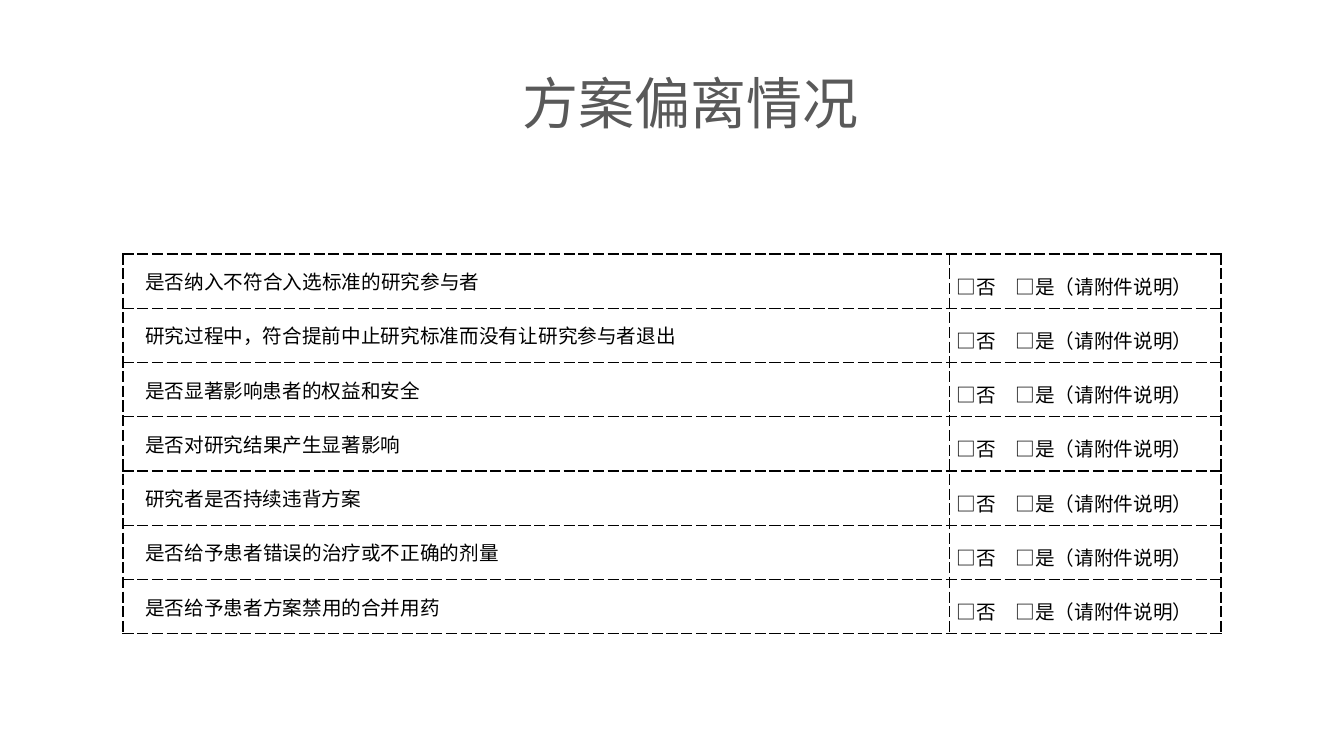
"""Build the slide with the protocol deviation checklist."""
import dataclasses

import pptx
import pptx.dml.color
import pptx.enum.text
import pptx.oxml
import pptx.oxml.ns
import pptx.util

Inches = pptx.util.Inches
Align = pptx.enum.text.PP_ALIGN
Anchor = pptx.enum.text.MSO_ANCHOR


@dataclasses.dataclass(frozen=True)
class Theme:
    sans: str = "Noto Sans CJK SC"
    serif: str = "Times New Roman"
    grey: str = "595959"
    black: str = "000000"
    title: int = 40
    body: int = 14
    rule: int = 1


theme = Theme()


def write(frame, text, fonts=(theme.sans,), size=theme.body, color=theme.black,
          align=Align.JUSTIFY, indent=0, space=None):
    """Fill a frame with text whose parts, split at |, take the fonts in turn."""
    para = frame.paragraphs[0]
    para.alignment = align
    para.line_spacing = space
    if indent:
        props = para._p.get_or_add_pPr()
        props.set("marL", "0")
        props.set("indent", str(Inches(indent)))
    for i, part in enumerate(text.split("|")):
        if not part:
            continue
        run = para.add_run()
        run.text = part
        run.font.name = fonts[i % len(fonts)]
        run.font.size = pptx.util.Pt(size)
        run.font.color.rgb = pptx.dml.color.RGBColor.from_string(color)
        east = pptx.oxml.parse_xml(
            f'<a:ea {pptx.oxml.ns.nsdecls("a")} typeface="{theme.sans}"/>')
        run.font._element.find(pptx.oxml.ns.qn("a:latin")).addnext(east)


def border(cell):
    """Draw a dashed rule on all four sides of a cell."""
    props = cell._tc.get_or_add_tcPr()
    for i, side in enumerate("LRTB"):
        props.insert(i, pptx.oxml.parse_xml(
            f'<a:ln{side} {pptx.oxml.ns.nsdecls("a")} w="{pptx.util.Pt(theme.rule)}">'
            f'<a:solidFill><a:srgbClr val="{theme.black}"/></a:solidFill>'
            f'<a:prstDash val="sysDash"/></a:ln{side}>'))


deck = pptx.Presentation()
deck.slide_width, deck.slide_height = Inches(13.33), Inches(7.5)
slide = deck.slides.add_slide(deck.slide_layouts[6])

title = slide.shapes.add_textbox(Inches(5.08), Inches(0.63), Inches(3.53), Inches(0.77))
title.text_frame.word_wrap = False
title.text_frame.auto_size = pptx.enum.text.MSO_AUTO_SIZE.SHAPE_TO_FIT_TEXT
write(title.text_frame, "方案偏离情况", size=theme.title, color=theme.grey,
      align=Align.CENTER)

items = [
    "是否|纳入不符合|入选|标准的|研究参与者",
    "|研究过程中，符合提前中止研究标准而没有让|研究参与者|退出",
    "|是否显著影响患者的权益和安全",
    "是否对|研究结果产生显著影响",
    "|研究者是否持续违背方案",
    "是否|给予|患者|错误的治疗或不正确的剂量",
    "是否|给予|患者|方案禁用的合并用药",
]
choice = "□否　□是（请附件说明）"

table = slide.shapes.add_table(len(items), 2, Inches(1.22), Inches(2.52),
                               Inches(10.89), Inches(3.77)).table
table.first_row = table.horz_banding = False
for col, width in zip(table.columns, (8.2, 2.69)):
    col.width = Inches(width)

for row, item in zip(table.rows, items):
    row.height = Inches(3.77 / len(items))
    for cell in row.cells:
        cell.vertical_anchor = Anchor.MIDDLE
        cell.margin_left = cell.margin_right = Inches(0.07)
        cell.margin_top = cell.margin_bottom = 0
        cell.fill.background()
        border(cell)
    label, answer = row.cells
    write(label.text_frame, item, fonts=(theme.serif, theme.sans), indent=0.15)
    write(answer.text_frame, choice, space=1.3)

deck.save("out.pptx")
